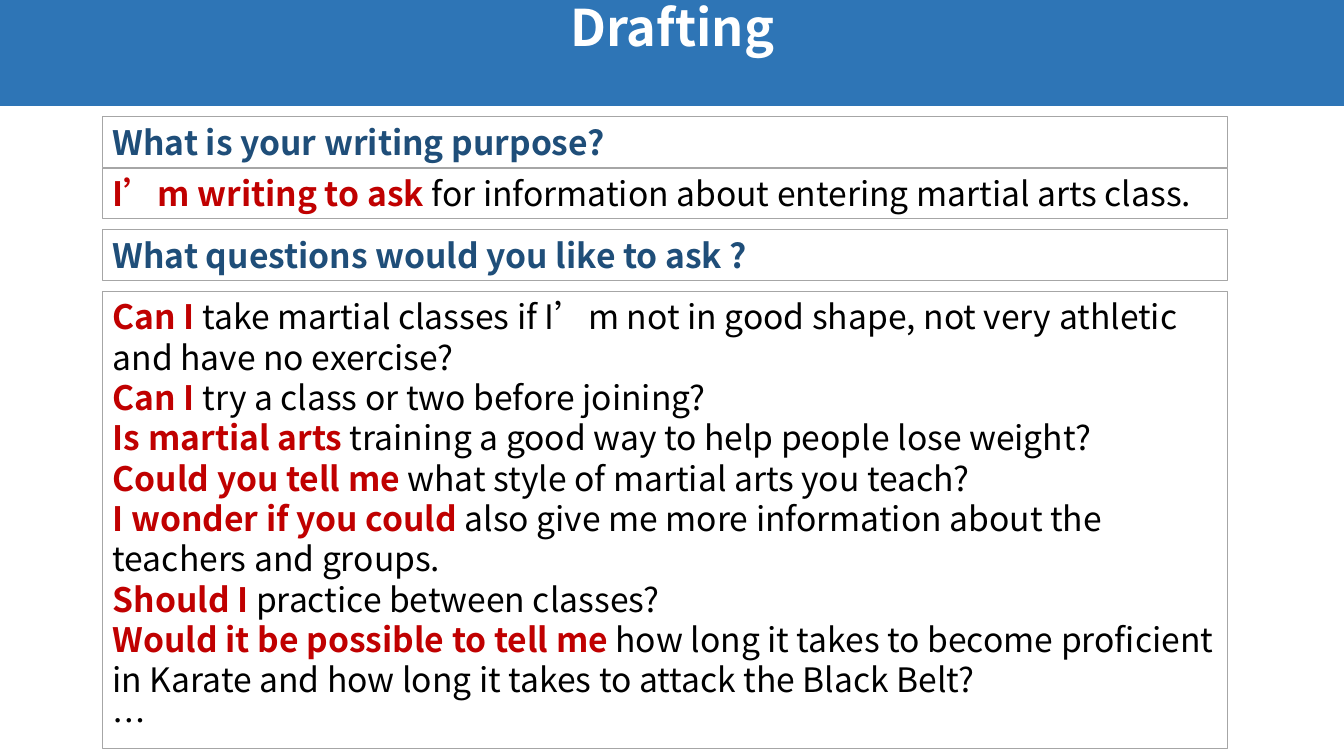
from dataclasses import dataclass

from pptx import Presentation
from pptx.dml.color import RGBColor
from pptx.enum.shapes import MSO_SHAPE
from pptx.enum.text import MSO_ANCHOR, MSO_AUTO_SIZE, PP_ALIGN
from pptx.util import Inches, Pt

RECT = MSO_SHAPE.RECTANGLE
TOP = MSO_ANCHOR.TOP
LEFT, CENTER = PP_ALIGN.LEFT, PP_ALIGN.CENTER
GROW, FIXED = MSO_AUTO_SIZE.SHAPE_TO_FIT_TEXT, MSO_AUTO_SIZE.NONE
FONT = "Noto Sans CJK SC"
WIDTH, HEIGHT = 13.33, 7.5
BLUE, NAVY, RED = "2E75B6", "1F4E79", "C00000"
BLACK, WHITE, GREY = "000000", "FFFFFF", "A6A6A6"
BOX_LEFT, BOX_WIDTH = 1.02 / WIDTH, 11.16 / WIDTH
ROW = 0.5 / HEIGHT
GAP = 0.11 / HEIGHT
FIRST_ROW = 1.16 / HEIGHT


@dataclass
class Line:
    """A paragraph with a bold opening and a plain ending."""
    bold: str
    plain: str = ""
    color: str = RED


@dataclass
class Box:
    """A framed box, with its height and the gap above as shares of the slide."""
    lines: list[Line]
    height: float = ROW
    gap: float = GAP


BOXES = [
    Box([Line("What is your writing purpose?", color=NAVY)], gap=0),
    Box([Line("I’m writing to ask ", "for information about entering martial arts class.")],
        gap=0.01 / HEIGHT),
    Box([Line("What questions would you like to ask ?", color=NAVY)]),
    Box([
        Line("Can I", " take martial classes if I’m not in good shape, "
                      "not very athletic and have no exercise?"),
        Line("Can I", " try a class or two before joining?"),
        Line("Is martial arts ", "training a good way to help people lose weight?"),
        Line("Could you tell me ", "what style of martial arts you teach?"),
        Line("I wonder if you could ",
             "also give me more information about the teachers and groups."),
        Line("Should I", " practice between classes?"),
        Line("Would it be possible to tell me ",
             "how long it takes to become proficient in Karate "
             "and how long it takes to attack the Black Belt?"),
        Line("", "…"),
    ], height=4.54 / HEIGHT),
]


def rgb(color: str) -> RGBColor:
    """Turn a hex string into a colour."""
    return RGBColor.from_string(color)


def add_rect(s, left: float, top: float, width: float, height: float, fill: str):
    """Draw a flat rectangle placed by shares of the slide's size."""
    sp = s.shapes.add_shape(RECT, Inches(left * WIDTH), Inches(top * HEIGHT),
                            Inches(width * WIDTH), Inches(height * HEIGHT))
    sp.shadow.inherit = False
    sp.fill.solid()
    sp.fill.fore_color.rgb = rgb(fill)
    sp.text_frame.word_wrap = True
    sp.text_frame.vertical_anchor = TOP
    return sp


def add_run(p, text: str, size: float, color: str, bold: bool) -> None:
    """Append one run of text."""
    r = p.add_run()
    r.text = text
    r.font.name = FONT
    r.font.size = Pt(size)
    r.font.bold = bold
    r.font.color.rgb = rgb(color)


def add_title(s, text: str) -> None:
    """Draw the title band across the top."""
    sp = add_rect(s, -0.01 / WIDTH, -0.02 / HEIGHT, 13.36 / WIDTH, 1.07 / HEIGHT, BLUE)
    sp.line.fill.background()
    tf = sp.text_frame
    tf.auto_size = FIXED
    p = tf.paragraphs[0]
    p.alignment = CENTER
    p.line_spacing = 0.9
    add_run(p, text, 36, WHITE, True)


def add_box(s, box: Box, top: float) -> None:
    """Draw one framed box with its lines."""
    sp = add_rect(s, BOX_LEFT, top, BOX_WIDTH, box.height, WHITE)
    sp.line.color.rgb = rgb(GREY)
    sp.line.width = Pt(0.75)
    tf = sp.text_frame
    tf.auto_size = GROW
    for i, line in enumerate(box.lines):
        p = tf.paragraphs[0] if i == 0 else tf.add_paragraph()
        p.alignment = LEFT
        if line.bold:
            add_run(p, line.bold, 24, line.color, True)
        if line.plain:
            add_run(p, line.plain, 24, BLACK, False)


def main() -> None:
    """Build the slide and save it."""
    prs = Presentation()
    prs.slide_width, prs.slide_height = Inches(WIDTH), Inches(HEIGHT)
    s = prs.slides.add_slide(prs.slide_layouts[6])
    add_title(s, "Drafting")
    top = FIRST_ROW
    for box in BOXES:
        top += box.gap
        add_box(s, box, top)
        top += box.height
    prs.save("out.pptx")


if __name__ == "__main__":
    main()
